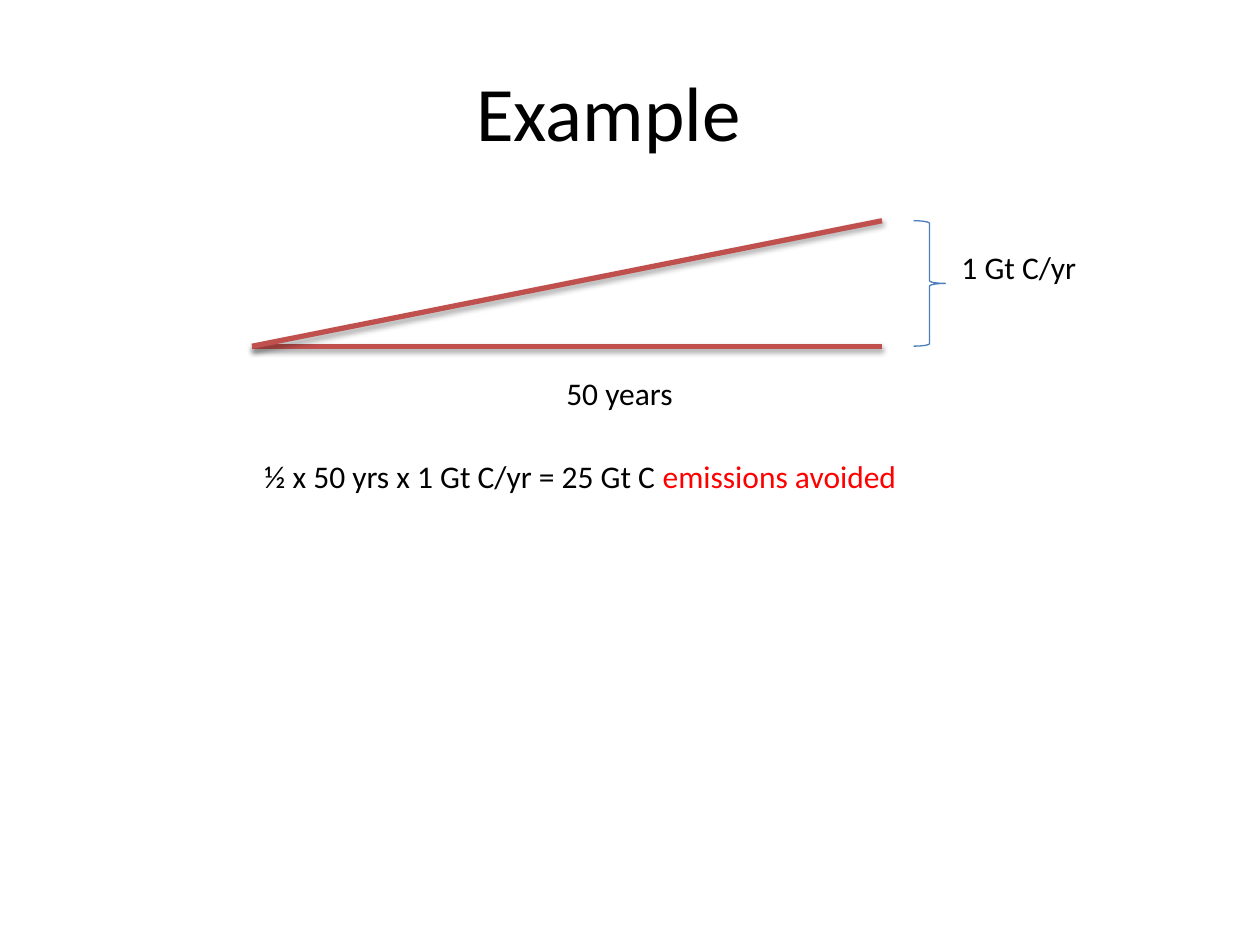
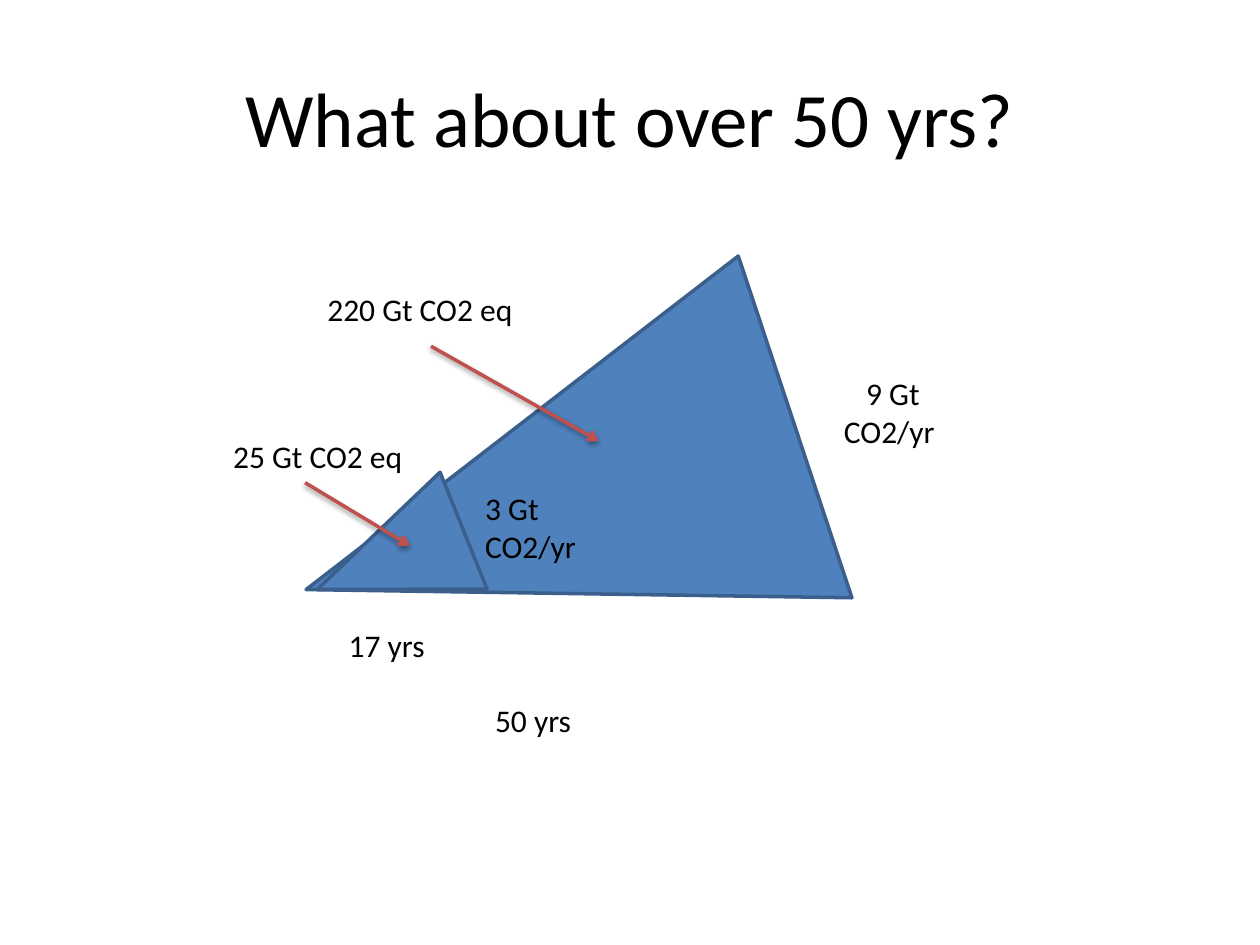
"""Build two slides on avoided carbon emissions: a worked example and the 50-year case."""
from lxml.etree import SubElement
from pptx import Presentation
from pptx.dml.color import RGBColor
from pptx.enum.shapes import MSO_CONNECTOR, MSO_SHAPE
from pptx.enum.text import MSO_ANCHOR, PP_ALIGN
from pptx.oxml.ns import qn
from pptx.util import Cm, Pt

BLACK = RGBColor(0x00, 0x00, 0x00)
HIGHLIGHT = RGBColor(0xFF, 0x00, 0x00)
WEDGE_RED = RGBColor(0xC0, 0x50, 0x4D)
TRIANGLE_BLUE = RGBColor(0x4F, 0x81, 0xBD)
TRIANGLE_EDGE = RGBColor(0x3A, 0x5F, 0x8C)
BRACE_BLUE = RGBColor(0x4B, 0x7E, 0xBC)

FONT = "Calibri"
TITLE_SIZE, LABEL_SIZE = 44, 18
TITLE_W, TITLE_H = 22.86, 3.18
LABEL_H = {1: 1.02, 2: 1.8}
LEFT, CENTER = PP_ALIGN.LEFT, PP_ALIGN.CENTER

WEDGE_START = (5.08, 6.98)
WEDGE_RIGHT, WEDGE_TOP = 17.78, 4.45
WEDGE_STYLE = {"width": 3, "opacity": 35, "distance": 1.8}
POINTER_STYLE = {"width": 2, "opacity": 38, "distance": 1.6, "arrow": True}

SLIDES = [
    {
        "title": ("Example", 0.84, 0.64),
        "triangles": [],
        "braces": [(18.42, WEDGE_TOP, 0.64, WEDGE_START[1] - WEDGE_TOP)],
        "lines": [(WEDGE_START, (WEDGE_RIGHT, WEDGE_START[1])),
                  (WEDGE_START, (WEDGE_RIGHT, WEDGE_TOP))],
        "line_style": WEDGE_STYLE,
        "labels": [
            ([("50 years", BLACK)], 10.8, 7.42, 3.38, 1, CENTER),
            ([("1 Gt C/yr", BLACK)], 18.85, 4.88, 3.38, 1, CENTER),
            ([("½ x 50 yrs x 1 Gt C/yr = 25 Gt C ", BLACK),
              ("emissions avoided", HIGHLIGHT)], 5.08, 9.09, 15.24, 1, LEFT),
        ],
    },
    {
        "title": ("What about over 50 yrs?", 1.27, 0.76),
        "triangles": [(7.47, 5.05, 7.26, 10.39, 251.6),
                      (6.6, 9.7, 2.54, 3.18, 248.1)],
        "braces": [],
        "lines": [((6.15, 9.73), (8.26, 11)),
                  ((8.69, 6.98), (12.07, 8.89))],
        "line_style": POINTER_STYLE,
        "labels": [
            ([("17 yrs", BLACK)], 6.78, 12.5, 3.38, 1, LEFT),
            ([("3 Gt CO2/yr", BLACK)], 9.53, 9.73, 3.38, 2, LEFT),
            ([("50 yrs", BLACK)], 9.73, 14, 3.38, 1, LEFT),
            ([("9 Gt CO2/yr ", BLACK)], 16.31, 7.42, 3.38, 2, CENTER),
            ([("25 Gt CO2 eq", BLACK)], 4.45, 8.69, 4.45, 1, LEFT),
            ([("220 Gt CO2 eq", BLACK)], 6.35, 5.72, 4.45, 1, LEFT),
        ],
    },
]


def add_text(slide, runs, box, size, align, anchor=MSO_ANCHOR.TOP):
    frame = slide.shapes.add_textbox(*map(Cm, box)).text_frame
    frame.word_wrap = True
    frame.vertical_anchor = anchor
    paragraph = frame.paragraphs[0]
    paragraph.alignment = align
    for text, color in runs:
        run = paragraph.add_run()
        run.text = text
        for name, value in {"name": FONT, "size": Pt(size)}.items():
            setattr(run.font, name, value)
        run.font.color.rgb = color


def add_outline(slide, preset, box, edge, width, fill=None, rotation=0):
    shape = slide.shapes.add_shape(preset, *map(Cm, box))
    shape.shadow.inherit = False
    shape.rotation = rotation
    if fill is None:
        shape.fill.background()
    else:
        shape.fill.solid()
        shape.fill.fore_color.rgb = fill
    shape.line.color.rgb = edge
    shape.line.width = Pt(width)


def add_line(slide, start, end, width, opacity, distance, arrow=False):
    line = slide.shapes.add_connector(MSO_CONNECTOR.STRAIGHT, *map(Cm, start + end))
    line.line.color.rgb = WEDGE_RED
    line.line.width = Pt(width)
    properties = line._element.spPr
    if arrow:
        SubElement(properties.find(qn("a:ln")), qn("a:tailEnd"), type="arrow")
    effects = SubElement(properties, qn("a:effectLst"))
    shadow = SubElement(effects, qn("a:outerShdw"), blurRad=str(Pt(3.1)),
                        dist=str(Pt(distance)), dir="5400000", rotWithShape="0")
    tint = SubElement(shadow, qn("a:srgbClr"), val=str(BLACK))
    SubElement(tint, qn("a:alpha"), val=str(opacity * 1000))


def build_slide(deck, content):
    slide = deck.slides.add_slide(deck.slide_layouts[6])
    for *box, rotation in content["triangles"]:
        add_outline(slide, MSO_SHAPE.ISOSCELES_TRIANGLE, box,
                    TRIANGLE_EDGE, 2, TRIANGLE_BLUE, rotation)
    title, left, top = content["title"]
    add_text(slide, [(title, BLACK)], (left, top, TITLE_W, TITLE_H),
             TITLE_SIZE, CENTER, MSO_ANCHOR.MIDDLE)
    for start, end in content["lines"]:
        add_line(slide, start, end, **content["line_style"])
    for box in content["braces"]:
        add_outline(slide, MSO_SHAPE.RIGHT_BRACE, box, BRACE_BLUE, 0.75)
    for runs, left, top, width, rows, align in content["labels"]:
        add_text(slide, runs, (left, top, width, LABEL_H[rows]), LABEL_SIZE, align)


def main():
    deck = Presentation()
    deck.slide_width, deck.slide_height = Cm(25.4), Cm(19.05)
    for content in SLIDES:
        build_slide(deck, content)
    deck.save("out.pptx")


if __name__ == "__main__":
    main()
